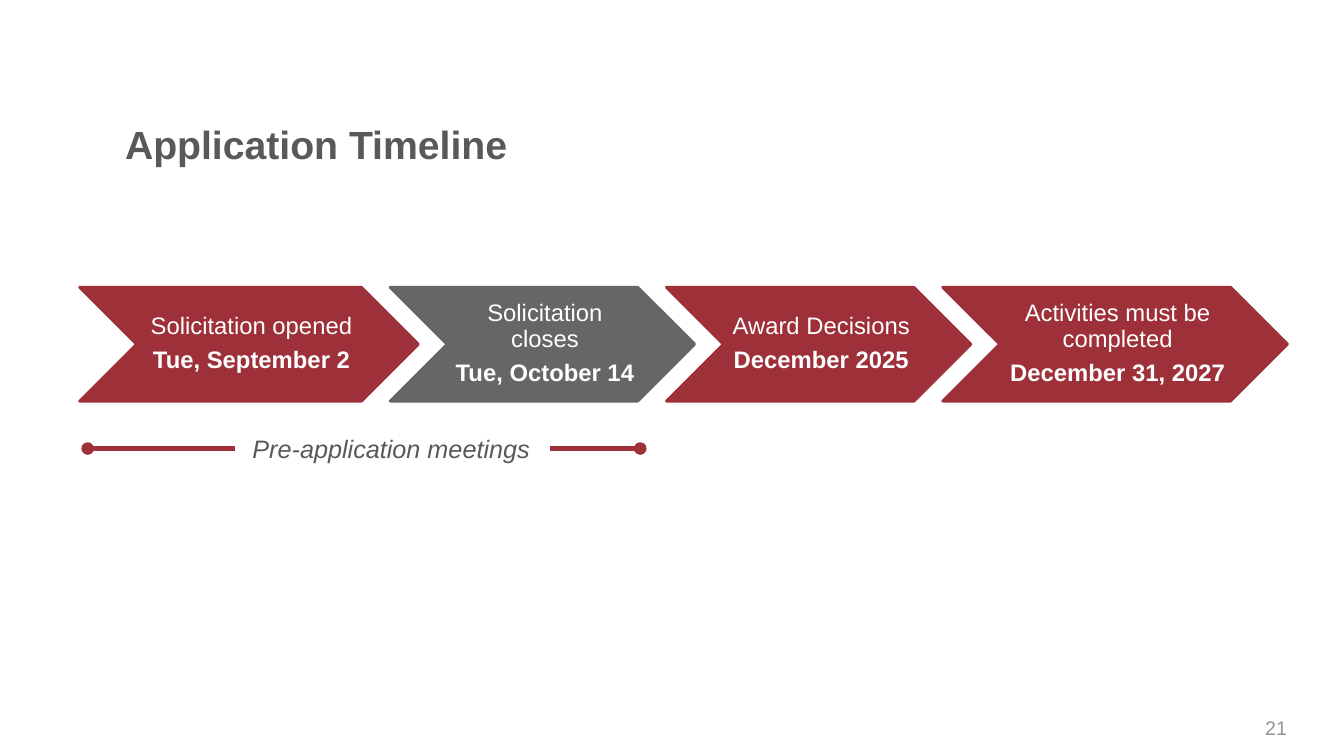
from dataclasses import dataclass

from lxml.etree import SubElement
from pptx import Presentation
from pptx.dml.color import RGBColor
from pptx.enum.shapes import MSO_CONNECTOR as CONN, MSO_SHAPE as SHAPE
from pptx.enum.text import MSO_ANCHOR as ANCHOR, MSO_AUTO_SIZE as FIT, PP_ALIGN as ALIGN
from pptx.oxml.ns import qn
from pptx.util import Inches, Pt


@dataclass(frozen=True)
class Theme:
    font: str = "Arial"
    red: str = "9E3039"
    gray: str = "666666"
    ink: str = "58595B"
    muted: str = "929395"
    white: str = "FFFFFF"
    title: int = 28
    label: int = 18
    step: int = 17
    number: int = 14


@dataclass(frozen=True)
class Step:
    label: str
    date: str
    width: float
    color: str


@dataclass(frozen=True)
class Span:
    start: float
    stop: float
    dot: str  # line end that carries the round marker


T = Theme()

STEPS = [
    Step("Solicitation opened", "Tue, September 2", 3.36, T.red),
    Step("Solicitation closes", "Tue, October 14", 3.02, T.gray),
    Step("Award Decisions", "December 2025", 3.02, T.red),
    Step("Activities must be completed", "December 31, 2027", 3.42, T.red),
]
SPANS = [Span(0.87, 2.33, "headEnd"), Span(5.45, 6.35, "tailEnd")]

STEPS_LEFT, STEPS_TOP, STEP_HEIGHT, OVERLAP = 0.79, 2.85, 1.13, 0.28
SPAN_Y = 4.45


def rgb(color: str) -> RGBColor:
    return RGBColor.from_string(color)


def write(tf, text: str, *, size: int, color: str, bold: bool = False,
          italic: bool = False, align=ALIGN.LEFT, first: bool = True,
          spacing: float = 1.0, after: float = 0) -> None:
    p = tf.paragraphs[0] if first else tf.add_paragraph()
    p.alignment, p.line_spacing = align, spacing
    p.space_before, p.space_after = Pt(0), Pt(after)
    r = p.add_run()
    r.text = text
    f = r.font
    f.name, f.size, f.bold, f.italic = T.font, Pt(size), bold, italic
    f.color.rgb = rgb(color)


def add_box(shapes, left: float, top: float, width: float, height: float):
    tf = shapes.add_textbox(Inches(left), Inches(top), Inches(width), Inches(height)).text_frame
    tf.word_wrap = True
    return tf


def add_step(shapes, step: Step, left: float) -> None:
    sp = shapes.add_shape(SHAPE.CHEVRON, Inches(left), Inches(STEPS_TOP),
                          Inches(step.width), Inches(STEP_HEIGHT))
    sp.shadow.inherit = False
    sp.fill.solid()
    sp.fill.fore_color.rgb = sp.line.color.rgb = rgb(step.color)
    sp.line.width = Pt(2)

    # The text sits between the notch and the point
    tf = add_box(shapes, left + STEP_HEIGHT / 2, STEPS_TOP,
                 step.width - STEP_HEIGHT, STEP_HEIGHT)
    tf.vertical_anchor = ANCHOR.MIDDLE
    tf.margin_left = Inches(0.07)
    tf.margin_top = tf.margin_right = tf.margin_bottom = Inches(0.02)
    for i, text in enumerate((step.label, step.date)):
        write(tf, text, size=T.step, color=T.white, bold=i == 1, align=ALIGN.CENTER,
              first=i == 0, spacing=0.9, after=6)


def add_span(shapes, span: Span) -> None:
    line = shapes.add_connector(CONN.STRAIGHT, Inches(span.start), Inches(SPAN_Y),
                                Inches(span.stop), Inches(SPAN_Y))
    line.line.color.rgb = rgb(T.red)
    line.line.width = Pt(3)
    SubElement(line.line._get_or_add_ln(), qn(f"a:{span.dot}"), type="oval")
    SubElement(line._element.spPr, qn("a:effectLst"))


def main() -> None:
    prs = Presentation()
    prs.slide_width, prs.slide_height = Inches(13.33), Inches(7.5)
    s = prs.slides.add_slide(prs.slide_layouts[5])

    # Title
    title = s.shapes.title
    title.left, title.top = Inches(1.14), Inches(1.11)
    title.width, title.height = Inches(10.93), Inches(0.63)
    title.text_frame.auto_size = FIT.NONE
    title.text_frame.vertical_anchor = ANCHOR.MIDDLE
    write(title.text_frame, "Application Timeline", size=T.title, color=T.ink, bold=True)

    # Chevron timeline
    timeline = s.shapes.add_group_shape().shapes
    left = STEPS_LEFT
    for step in STEPS:
        add_step(timeline, step, left)
        left += step.width - OVERLAP

    # Pre-application period
    tf = add_box(s.shapes, 2.33, 4.25, 3.1, 0.4)
    write(tf, "Pre-application meetings", size=T.label, color=T.ink,
          italic=True, align=ALIGN.CENTER)
    for span in SPANS:
        add_span(s.shapes, span)

    # Slide number
    write(add_box(s.shapes, 12.45, 7.05, 0.87, 0.4), "21", size=T.number, color=T.muted)

    prs.save("out.pptx")


if __name__ == "__main__":
    main()
